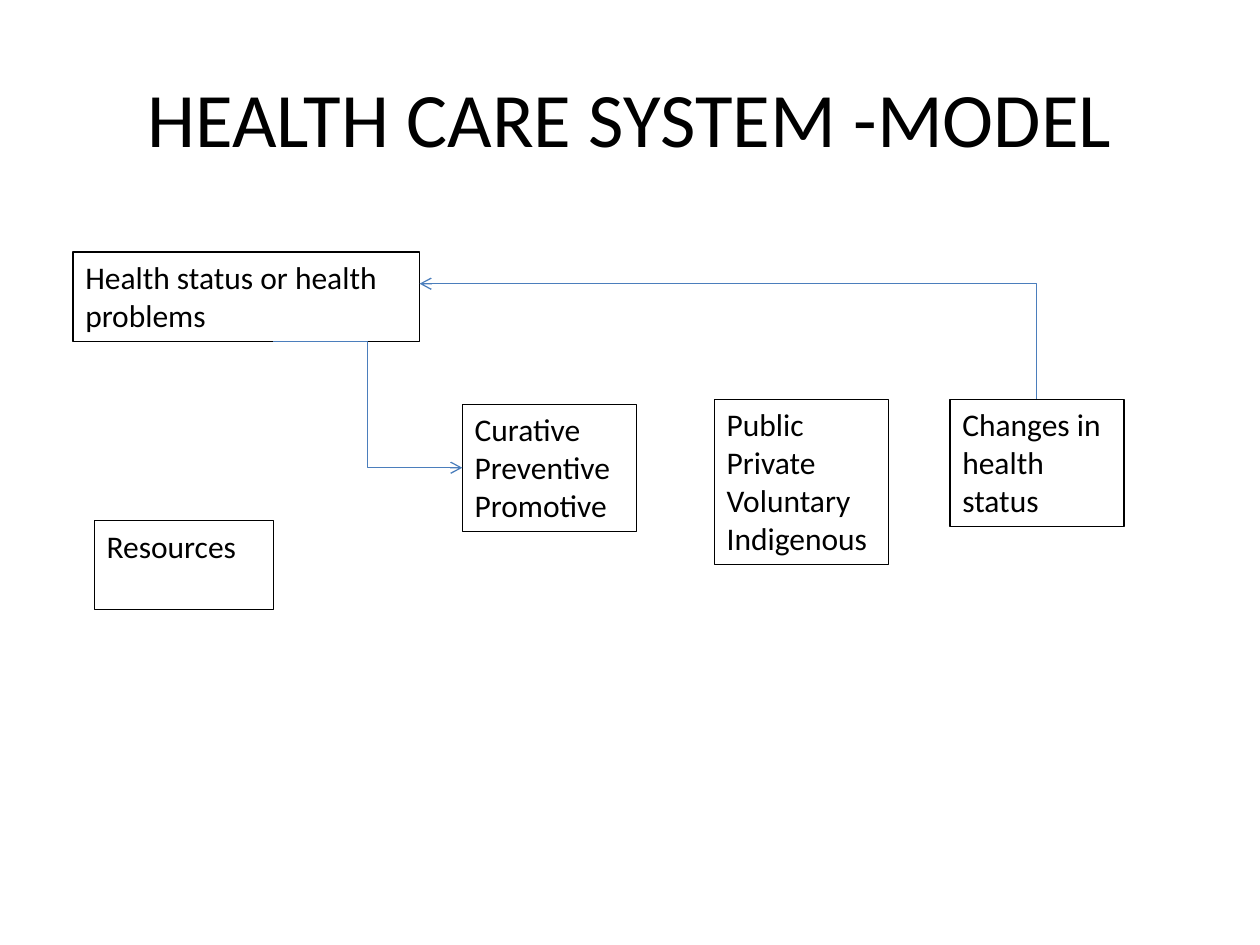
from lxml import etree
from pptx import Presentation
from pptx.dml.color import RGBColor
from pptx.enum.shapes import MSO_CONNECTOR, MSO_SHAPE
from pptx.enum.text import MSO_ANCHOR, PP_ALIGN
from pptx.oxml.ns import qn
from pptx.util import Cm, Pt

ELBOW = MSO_CONNECTOR.ELBOW
RECT = MSO_SHAPE.RECTANGLE
TOP, MIDDLE = MSO_ANCHOR.TOP, MSO_ANCHOR.MIDDLE
LEFT, CENTER = PP_ALIGN.LEFT, PP_ALIGN.CENTER

FONT = "Calibri"
COLORS = {"ink": "000000", "arrow": "4B7EBC"}
WIDE, MID, SLIM = 6.99, 3.61, 3.51
BOXES = [
    ("Health status or health problems", 1.47, 5.08, WIDE, 1.8),
    ("Resources", 1.9, 10.49, MID, 1.8),
    ("Curative\nPreventive\nPromotive", 9.32, 8.15, SLIM, 2.57),
    ("Public\nPrivate\nVoluntary\nIndigenous", 14.4, 8.05, SLIM, 3.33),
    ("Changes in health status", 19.15, 8.05, SLIM, 2.57),
]


def color(name):
    """Return the named colour."""
    return RGBColor.from_string(COLORS[name])


def write(shape, text, size, align, anchor):
    """Put styled text into a shape."""
    frame = shape.text_frame
    frame.text = text
    frame.word_wrap = True
    frame.vertical_anchor = anchor
    for para in frame.paragraphs:
        para.alignment = align
        for run in para.runs:
            run.font.name = FONT
            run.font.size = Pt(size)
            run.font.color.rgb = color("ink")


def add_title(slide, text):
    """Add the centred slide title."""
    box = slide.shapes.add_textbox(Cm(1.27), Cm(0.76), Cm(22.86), Cm(3.18))
    write(box, text, 44, CENTER, MIDDLE)


def add_box(slide, text, left, top, width, height):
    """Add an outlined box with one paragraph per line of text."""
    box = slide.shapes.add_shape(RECT, Cm(left), Cm(top), Cm(width), Cm(height))
    box.shadow.inherit = False
    box.fill.background()
    box.line.color.rgb = color("ink")
    box.line.width = Pt(0.75)
    write(box, text, 18, LEFT, TOP)


def add_elbow(slide, start, stop, bend, tip):
    """Add a bent connector with an open arrowhead at the given tip."""
    ends = [Cm(value) for value in (*start, *stop)]
    link = slide.shapes.add_connector(ELBOW, *ends)
    link.line.color.rgb = color("arrow")
    link.line.width = Pt(0.75)
    props = link._element.spPr
    props.find(qn("a:prstGeom")).set("prst", bend)
    etree.SubElement(props.find(qn("a:ln")), qn(tip), type="arrow")
    etree.SubElement(props, qn("a:effectLst"))


def main():
    """Build and save the slide."""
    deck = Presentation()
    deck.slide_width, deck.slide_height = Cm(25.4), Cm(19.05)
    slide = deck.slides.add_slide(deck.slide_layouts[6])
    add_title(slide, "HEALTH CARE SYSTEM -MODEL")
    for box in BOXES:
        add_box(slide, *box)
    add_elbow(slide, (8.46, 5.72), (20.9, 8.05), "bentConnector2", "a:headEnd")
    add_elbow(slide, (5.51, 6.88), (9.32, 9.43), "bentConnector3", "a:tailEnd")
    deck.save("out.pptx")


if __name__ == "__main__":
    main()
